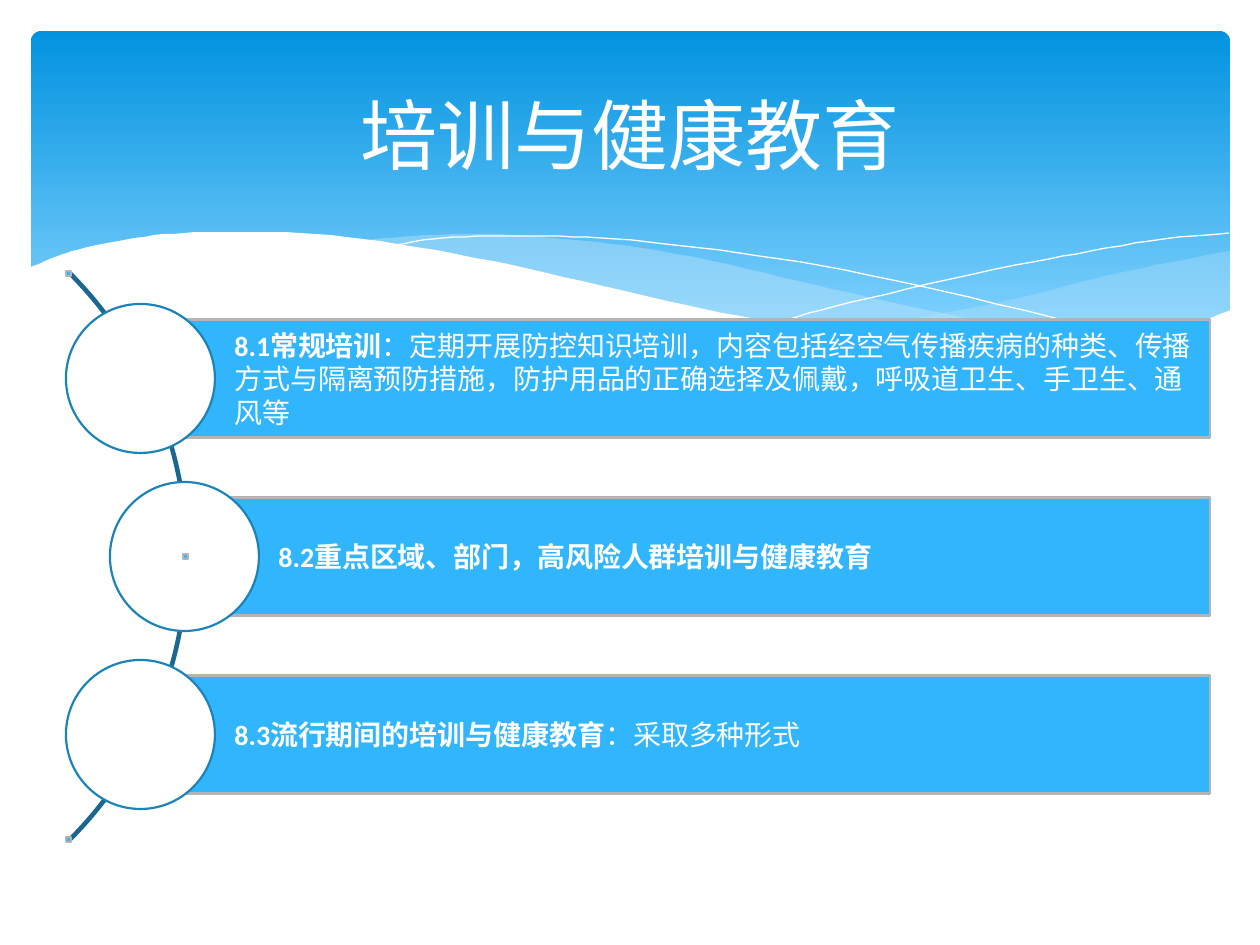
from lxml import etree
from pptx import Presentation
from pptx.dml.color import RGBColor
from pptx.enum.shapes import MSO_SHAPE
from pptx.enum.text import MSO_ANCHOR, PP_ALIGN
from pptx.oxml.ns import qn
from pptx.util import Emu, Pt

RECT, OVAL = MSO_SHAPE.RECTANGLE, MSO_SHAPE.OVAL
ROUNDED, ARC = MSO_SHAPE.ROUNDED_RECTANGLE, MSO_SHAPE.BLOCK_ARC
MIDDLE = MSO_ANCHOR.MIDDLE
LEFT, CENTER = PP_ALIGN.LEFT, PP_ALIGN.CENTER

EMU_PER_PX = 914400 / 126
FONT = "Calibri"
COLORS = {
    "white": "FFFFFF", "sky_top": "0293E0", "sky_bottom": "83D3FE",
    "wave": "C6E7FC", "bar": "31B6FD", "bar_edge": "B4B4B4",
    "arc": "1C678F", "circle_edge": "1C83B9",
}

# Wave edges, relative to the banner's top left corner
RIGHT_WAVE = [
    [(1199, 220), (1147, 230), (1092, 241), (1054, 250), (983, 268),
     (918, 281), (859, 293), (802, 303)],
    [(802, 303), (874, 312), (938, 318), (995, 319), (1056, 316),
     (1109, 308), (1156, 295), (1199, 280)],
]
MIDDLE_WAVE = [
    [(1094, 313), (1024, 303), (946, 289), (859, 271), (762, 249),
     (686, 231), (617, 218), (555, 210), (498, 205), (448, 203),
     (382, 205), (329, 210)],
    [(329, 210), (400, 220), (478, 235), (535, 249), (637, 271),
     (726, 290), (807, 304), (879, 314), (943, 318), (1000, 319),
     (1049, 318), (1094, 313)],
]
FALLING_LINE = [(358, 215), (402, 208), (457, 205), (515, 205), (585, 208),
                (670, 217), (770, 231), (885, 254), (1016, 285), (1112, 312)]
RISING_LINE = [(741, 293), (791, 279), (876, 258), (985, 234), (1060, 220),
               (1133, 208), (1198, 202)]
WHITE_WAVE = [
    [(1200, 279), (1166, 292), (1128, 303), (1071, 313), (1006, 318),
     (928, 315), (836, 307), (729, 289), (636, 270), (532, 246),
     (462, 230), (366, 213), (284, 203), (212, 201), (153, 202),
     (103, 207), (53, 217), (27, 225), (-2, 237)],
    [(-2, 384), (1200, 384)],
]

TOPICS = [
    ("8.1常规培训", "：定期开展防控知识培训，内容包括经空气传播疾病的种类、传播方式与隔离"
     "预防措施，防护用品的正确选择及佩戴，呼吸道卫生、手卫生、通风等"),
    ("8.2重点区域、部门，高风险人群培训与健康教育", ""),
    ("8.3流行期间的培训与健康教育", "：采取多种形式"),
]


def px(length):
    return Emu(round(length * EMU_PER_PX))


def color(key):
    return RGBColor.from_string(COLORS[key])


def style(shape, fill=None, line=None, width=1.25, alpha=None):
    shape.shadow.inherit = False
    if fill:
        shape.fill.solid()
        shape.fill.fore_color.rgb = color(fill)
    else:
        shape.fill.background()
    if alpha:
        tint = shape.fill._xPr.find(qn("a:solidFill"))[0]
        etree.SubElement(tint, qn("a:alpha"), val=str(alpha * 1000))
    if line:
        shape.line.color.rgb = color(line)
        shape.line.width = Pt(width)
    else:
        shape.line.fill.background()
    return shape


def add_shape(slide, kind, box, **look):
    return style(slide.shapes.add_shape(kind, *map(px, box)), **look)


def write(shape, runs, size, align=LEFT, insets=(13, 6, 13, 6)):
    """Fill a shape with one paragraph of (text, bold) runs."""
    frame = shape.text_frame
    frame.word_wrap = True
    frame.vertical_anchor = MIDDLE
    (frame.margin_left, frame.margin_top,
     frame.margin_right, frame.margin_bottom) = map(px, insets)
    paragraph = frame.paragraphs[0]
    paragraph.alignment = align
    for text, bold in runs:
        run = paragraph.add_run()
        run.text = text
        run.font.name, run.font.size, run.font.bold = FONT, Pt(size), bold
        run.font.color.rgb = color("white")


def smooth(points, steps=5):
    """Catmull-Rom curve through the points."""
    padded = [points[0], *points, points[-1]]
    curve = [points[0]]
    for a, b, c, d in zip(padded, padded[1:], padded[2:], padded[3:]):
        for step in range(1, steps + 1):
            t = step / steps
            curve.append(tuple(
                (2 * q + (r - p) * t + (2 * p - 5 * q + 4 * r - s) * t ** 2
                 + (3 * q - p - 3 * r + s) * t ** 3) / 2
                for p, q, r, s in zip(a, b, c, d)))
    return curve


def add_curve(slide, left, top, edges, closed=True, **look):
    points = [(left + x, top + y) for edge in edges for x, y in smooth(edge)]
    builder = slide.shapes.build_freeform(*points[0], scale=EMU_PER_PX)
    builder.add_line_segments(points[1:], close=closed)
    style(builder.convert_to_shape(), **look)


def add_banner(slide, left, top, width, height):
    # Gradient sky
    sky = add_shape(slide, ROUNDED, (left, top, width, height))
    sky.adjustments[0] = 0.03
    sky.fill.gradient()
    sky.fill.gradient_angle = 270
    stops = zip(sky.fill.gradient_stops, (0, 0.9), ("sky_top", "sky_bottom"))
    for stop, position, key in stops:
        stop.position = position
        stop.color.rgb = color(key)

    # Translucent waves, thin lines and the white wave in front
    add_curve(slide, left, top, RIGHT_WAVE, fill="wave", alpha=29)
    add_curve(slide, left, top, MIDDLE_WAVE, fill="wave", alpha=40)
    for thin_line in (FALLING_LINE, RISING_LINE):
        add_curve(slide, left, top, [thin_line], closed=False,
                  line="white", width=0)
    add_curve(slide, left, top, WHITE_WAVE, fill="white")


def add_title(slide, left, top, width, height):
    title = slide.shapes.add_textbox(*map(px, (left, top, width, height)))
    write(title, [("培训与健康教育", False)], 44, align=CENTER)


def add_topics(slide, left, top, width, height):
    middle = top + height / 2
    pitch, bar_height, circle, indent, handle = 178, 118, 149, 44, 5

    # Arc behind the circles
    diameter = 805
    arc = add_shape(slide, ARC, (left + 122 - diameter, middle - diameter / 2,
                                 diameter, diameter), line="arc")
    for index, value in enumerate((189, 27, 0.003)):
        arc.adjustments[index] = value

    # Bars with their circles
    for index, (heading, detail) in enumerate(TOPICS):
        center_x = left + circle / 2 + indent * (index % 2)
        center_y = middle + pitch * (index - 1)
        bar = add_shape(slide, RECT, (center_x, center_y - bar_height / 2,
                                      left + width - center_x, bar_height),
                        fill="bar", line="bar_edge")
        runs = [(heading, True)] + ([(detail, False)] if detail else [])
        write(bar, runs, 16, insets=(94, 5, 5, 5))
        add_shape(slide, OVAL, (center_x - circle / 2, center_y - circle / 2,
                                circle, circle),
                  fill="white", line="circle_edge")

    # Small squares at the ends and middle of the arc
    for x, y in ((0, top), (117, middle - handle / 2),
                 (0, top + height - handle)):
        add_shape(slide, RECT, (left + x if x else left, y, handle, handle),
                  fill="bar", line="bar_edge")


def main():
    deck = Presentation()
    deck.slide_width, deck.slide_height = px(1260), px(945)
    slide = deck.slides.add_slide(deck.slide_layouts[6])
    add_banner(slide, 31, 31, 1199, 340)
    add_topics(slide, 66, 271, 1144, 571)
    add_title(slide, 63, 47, 1134, 173)
    deck.save("out.pptx")


if __name__ == "__main__":
    main()
